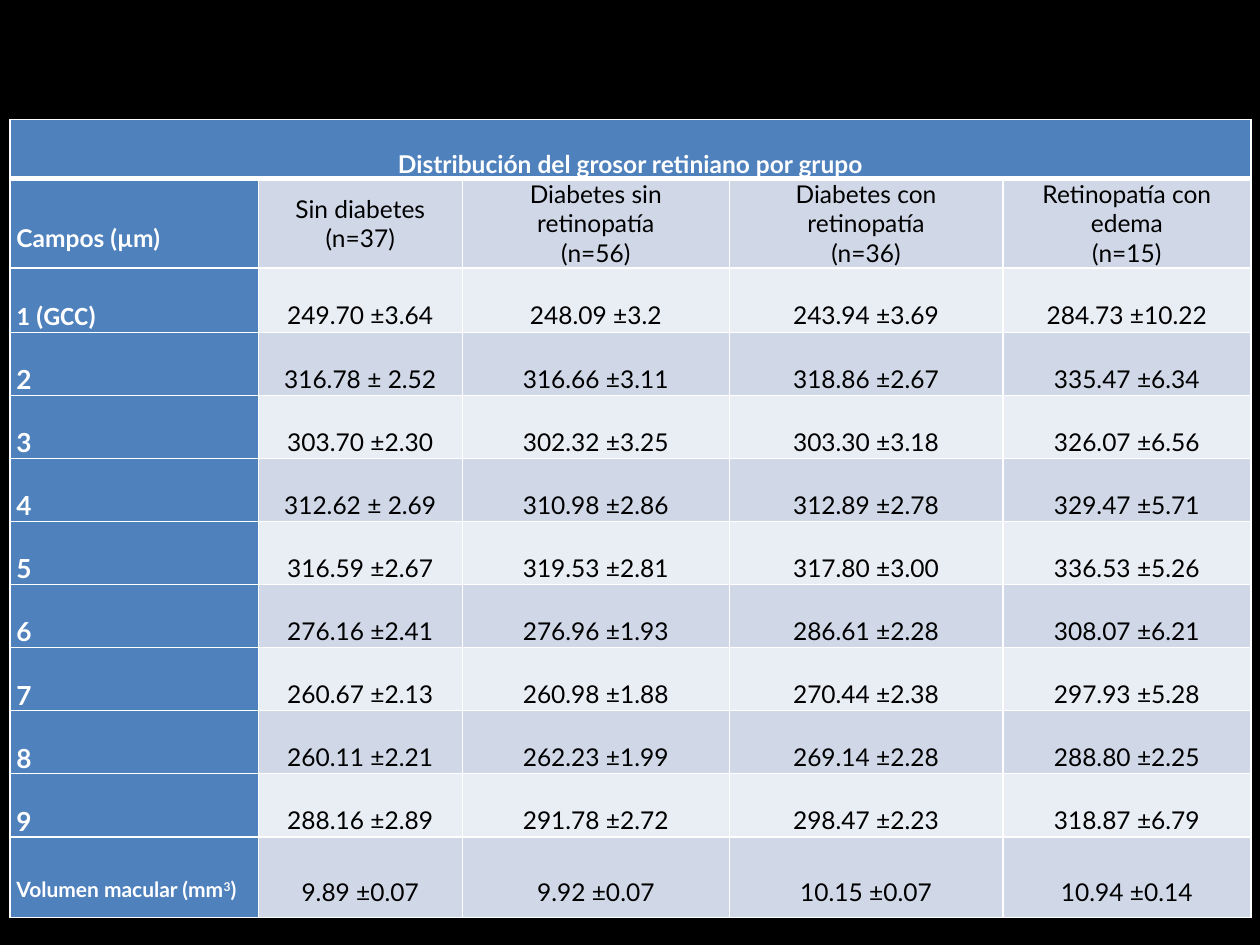
from pptx import Presentation
from pptx.dml.color import RGBColor
from pptx.enum.text import MSO_ANCHOR, PP_ALIGN
from pptx.oxml.ns import qn
from pptx.util import Inches, Pt
from lxml.etree import SubElement

WHITE, BLACK, BLUE = "FFFFFF", "000000", "4F81BD"
BANDS = ("D0D8E8", "E9EDF4")

TITLE = "Distribución del grosor retiniano por grupo"
GROUPS = [
    "Campos (µm)",
    "Sin diabetes\n(n=37)",
    "Diabetes sin retinopatía\n(n=56)",
    "Diabetes con retinopatía\n(n=36)",
    "Retinopatía con edema\n(n=15)",
]
MEASUREMENTS = [
    ["1 (GCC)", "249.70 ±3.64", "248.09 ±3.2", "243.94 ±3.69", "284.73 ±10.22"],
    ["2", "316.78 ± 2.52", "316.66 ±3.11", "318.86 ±2.67", "335.47 ±6.34"],
    ["3", "303.70 ±2.30", "302.32 ±3.25", "303.30 ±3.18", "326.07 ±6.56"],
    ["4", "312.62 ± 2.69", "310.98 ±2.86", "312.89 ±2.78", "329.47 ±5.71"],
    ["5", "316.59 ±2.67", "319.53 ±2.81", "317.80 ±3.00", "336.53 ±5.26"],
    ["6", "276.16 ±2.41", "276.96 ±1.93", "286.61 ±2.28", "308.07 ±6.21"],
    ["7", "260.67 ±2.13", "260.98 ±1.88", "270.44 ±2.38", "297.93 ±5.28"],
    ["8", "260.11 ±2.21", "262.23 ±1.99", "269.14 ±2.28", "288.80 ±2.25"],
    ["9", "288.16 ±2.89", "291.78 ±2.72", "298.47 ±2.23", "318.87 ±6.79"],
]
VOLUMES = ["", "9.89 ±0.07", "9.92 ±0.07", "10.15 ±0.07", "10.94 ±0.14"]
VOLUME_LABEL = ["Volumen macular (mm", "3", ")"]

COLUMN_WIDTHS = [1.97, 1.62, 2.12, 2.17, 1.97]
ROW_HEIGHTS = [0.39, 0.71] + [0.43] * len(MEASUREMENTS) + [0.64]


def color(hex_string):
    return RGBColor.from_string(hex_string)


def set_borders(cell, top=1, bottom=1):
    """Draw white cell borders; call before the fill, which must follow them."""
    properties = cell._tc.get_or_add_tcPr()
    for side, points in (("L", 1), ("R", 1), ("T", top), ("B", bottom)):
        line = SubElement(properties, qn(f"a:ln{side}"), w=str(Pt(points)))
        fill = SubElement(line, qn("a:solidFill"))
        SubElement(fill, qn("a:srgbClr"), val=WHITE)


def style_cell(cell, fill, alignment, size, text_color, bold=False,
               spacing=2, font_name="Lato", anchor=MSO_ANCHOR.MIDDLE):
    cell.fill.solid()
    cell.fill.fore_color.rgb = color(fill)
    cell.margin_left = cell.margin_right = Inches(0.05)
    cell.margin_top = cell.margin_bottom = 0
    cell.vertical_anchor = anchor
    for paragraph in cell.text_frame.paragraphs:
        paragraph.alignment = alignment
        paragraph.line_spacing = spacing
        for run in paragraph.runs:
            run.font.name = font_name
            run.font.size = Pt(size)
            run.font.bold = bold
            run.font.color.rgb = color(text_color)


def fill_title(table):
    cells = list(table.rows[0].cells)
    cells[0].merge(cells[-1])
    for cell in cells:
        set_borders(cell, bottom=3)
    cells[0].text_frame.text = TITLE
    style_cell(cells[0], BLUE, PP_ALIGN.CENTER, 14, WHITE, bold=True,
               anchor=MSO_ANCHOR.TOP)


def fill_row(table, row_index, texts, label_size, label_font="Lato", value_spacing=2):
    for column, text in enumerate(texts):
        cell = table.cell(row_index, column)
        set_borders(cell, top=3 if row_index == 1 else 1)
        if text:
            cell.text_frame.text = text
        if column == 0:
            style_cell(cell, BLUE, PP_ALIGN.JUSTIFY, label_size, WHITE,
                       bold=True, font_name=label_font)
        else:
            style_cell(cell, BANDS[(row_index + 1) % 2], PP_ALIGN.CENTER, 14,
                       BLACK, spacing=value_spacing)


def fill_volume_row(table, row_index):
    paragraph = table.cell(row_index, 0).text_frame.paragraphs[0]
    for text in VOLUME_LABEL:
        paragraph.add_run().text = text
    fill_row(table, row_index, VOLUMES, 12)
    exponent = paragraph.runs[1]
    exponent.font._element.set("baseline", "30000")


def add_thickness_table(slide, left, top):
    table = slide.shapes.add_table(
        len(ROW_HEIGHTS), len(COLUMN_WIDTHS), left, top,
        Inches(sum(COLUMN_WIDTHS)), Inches(sum(ROW_HEIGHTS))).table
    for column, width in zip(table.columns, COLUMN_WIDTHS):
        column.width = Inches(width)
    for row, height in zip(table.rows, ROW_HEIGHTS):
        row.height = Inches(height)

    fill_title(table)
    fill_row(table, 1, GROUPS, 14, value_spacing=1)
    for row_index, texts in enumerate(MEASUREMENTS, start=2):
        label_font = "Calibri" if row_index == 2 else "Lato"
        fill_row(table, row_index, texts, 15, label_font)
    fill_volume_row(table, len(ROW_HEIGHTS) - 1)


def main():
    presentation = Presentation()
    presentation.slide_width = Inches(10)
    presentation.slide_height = Inches(7.5)
    slide = presentation.slides.add_slide(presentation.slide_layouts[6])
    slide.background.fill.solid()
    slide.background.fill.fore_color.rgb = color(BLACK)
    add_thickness_table(slide, Inches(0.08), Inches(0.95))
    presentation.save("out.pptx")


if __name__ == "__main__":
    main()
